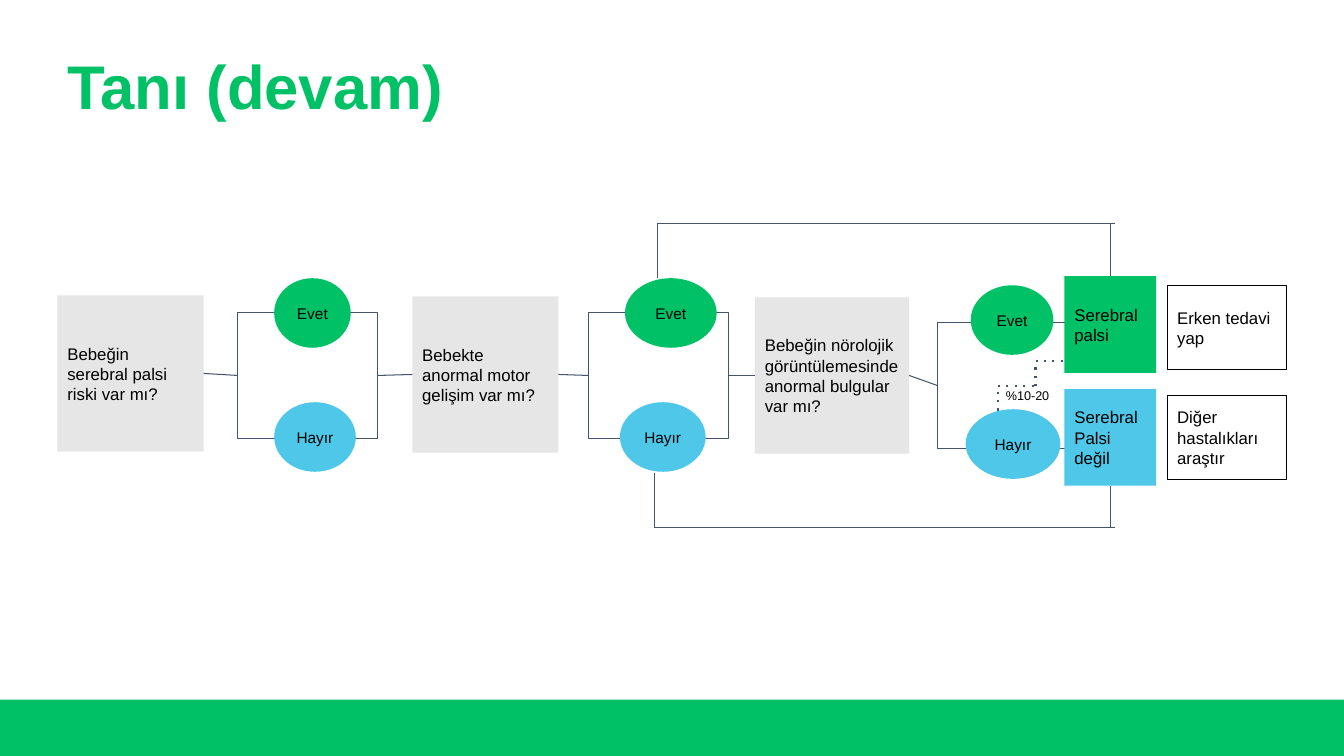
"""Build the slide with the decision flow for diagnosing cerebral palsy."""
from dataclasses import dataclass
from itertools import pairwise

from lxml.etree import SubElement
from pptx import Presentation
from pptx.dml.color import RGBColor as RGB
from pptx.enum.shapes import MSO_CONNECTOR as CONN, MSO_SHAPE as SHAPE
from pptx.enum.text import MSO_ANCHOR as ANCHOR, PP_ALIGN as ALIGN
from pptx.oxml.ns import qn
from pptx.util import Inches, Pt

WIDTH, HEIGHT = Inches(13.333), Inches(7.5)
COL, ROW = WIDTH / 80, HEIGHT / 45
TOP, LEFT, BOTTOM, RIGHT = range(4)


@dataclass(frozen=True)
class Theme:
    font: str = "Arial"
    green: str = "00C165"
    blue: str = "4FC7E8"
    grey: str = "E7E6E6"
    line: str = "44546A"
    white: str = "FFFFFF"
    black: str = "000000"
    title: int = 44
    body: int = 12
    answer: int = 11
    note: int = 9
    thin: float = 0.75
    dotted: float = 1.5


THEME = Theme()


def grid(x, y, w, h):
    return round(x * COL), round(y * ROW), round(w * COL), round(h * ROW)


def write(sp, text, size, align=ALIGN.LEFT, color=THEME.black, bold=False):
    tf = sp.text_frame
    tf.text = text
    tf.word_wrap = True
    tf.vertical_anchor = ANCHOR.MIDDLE
    tf.margin_left = tf.margin_right = Inches(0.1)
    tf.margin_top = tf.margin_bottom = Inches(0.1)
    p = tf.paragraphs[0]
    p.alignment = align
    r = p.runs[0]
    r.font.name, r.font.size, r.font.bold = THEME.font, Pt(size), bold
    r.font.color.rgb = RGB.from_string(color)


def add_title(s, text, box):
    sp = s.shapes.title
    sp.left, sp.top, sp.width, sp.height = grid(*box)
    write(sp, text, THEME.title, color=THEME.green, bold=True)
    sp.text_frame.margin_top = sp.text_frame.margin_bottom = Inches(0.05)
    sp.text_frame.paragraphs[0].line_spacing = 0.9


def add_box(s, box, fill=None, line=None, text="", kind=SHAPE.RECTANGLE):
    sp = s.shapes.add_shape(kind, *grid(*box))
    sp.shadow.inherit = False
    if fill:
        sp.fill.solid()
        sp.fill.fore_color.rgb = RGB.from_string(fill)
    else:
        sp.fill.background()
    if line:
        sp.line.color.rgb = RGB.from_string(line)
        sp.line.width = Pt(THEME.thin)
    else:
        sp.line.fill.background()
    if text and kind == SHAPE.OVAL:
        write(sp, text, THEME.answer, ALIGN.CENTER)
    elif text:
        write(sp, text, THEME.body)
    return sp


def add_line(s, start=(0, 0), end=(0, 0), dotted=False):
    cx = s.shapes.add_connector(CONN.STRAIGHT, *grid(*start, *end))
    cx.line.color.rgb = RGB.from_string(THEME.line)
    cx.line.width = Pt(THEME.dotted if dotted else THEME.thin)
    props = cx._element.spPr
    if dotted:
        SubElement(props.find(qn("a:ln")), qn("a:prstDash"), val="dot")
    SubElement(props, qn("a:effectLst"))
    return cx


def add_path(s, points):
    for start, end in pairwise(points):
        add_line(s, start, end, dotted=True)


def add_detour(s, x, edge, rail, result, side):
    """Lead from an answer along an outer rail to a side of a result."""
    add_line(s, (x, edge), (x, rail))
    add_line(s, (x, rail), (66.4, rail))
    add_line(s, (66.09, rail)).end_connect(result, side)


def add_answers(s, yes_x, yes_w, no_x, no_w, y):
    add_box(s, (yes_x, y, yes_w, 4.14), THEME.green, text="Evet", kind=SHAPE.OVAL)
    add_box(s, (no_x, y + 7.38, no_w, 4.14), THEME.blue, text="Hayır", kind=SHAPE.OVAL)


def main():
    prs = Presentation()
    prs.slide_width, prs.slide_height = WIDTH, HEIGHT
    s = prs.slides.add_slide(prs.slide_layouts[5])
    add_box(s, (0, 41.64, 80, 3.36), THEME.green)
    add_title(s, "Tanı (devam)", (3.42, 3, 32.82, 4.68))

    frames = [add_box(s, (x, y, 8.34, 7.5), line=THEME.line)
              for x, y in ((14.16, 18.6), (35.04, 18.6), (55.8, 19.2))]
    add_box(s, (63.48, 17.7, 1.98, 9.24), THEME.white)
    add_path(s, [(59.4, 25.44), (59.4, 23), (61.64, 23), (61.64, 21.5), (63.5, 21.5)])

    questions = [add_box(s, (x, y, w, 9.3), THEME.grey, text=text) for x, y, w, text in (
        (3.42, 17.58, 8.7, "Bebeğin serebral palsi riski var mı?"),
        (24.54, 17.64, 8.7, "Bebekte anormal motor gelişim var mı?"),
        (44.94, 17.7, 9.18, "Bebeğin nörolojik görüntülemesinde anormal bulgular var mı?"))]
    chain = [sp for pair in zip(questions, frames) for sp in pair]
    for source, target in pairwise(chain):
        cx = add_line(s)
        cx.begin_connect(source, RIGHT)
        cx.end_connect(target, LEFT)

    for answers in ((16.32, 4.56, 16.32, 4.86, 16.56),
                    (37.2, 5.46, 36.9, 5.1, 16.56),
                    (57.78, 4.92, 57.48, 5.64, 16.98)):
        add_answers(s, *answers)

    palsy, other = [add_box(s, (63.36, y, 5.46, 5.76), fill, text=text) for y, fill, text in (
        (16.44, THEME.green, "Serebral palsi"),
        (23.16, THEME.blue, "Serebral Palsi değil"))]
    add_detour(s, 39.15, 16.56, 13.3, palsy, TOP)
    add_detour(s, 38.94, 28.14, 31.4, other, BOTTOM)
    for y, text in ((16.98, "Erken tedavi yap"), (23.52, "Diğer hastalıkları araştır")):
        add_box(s, (69.48, y, 7.08, 5.04), THEME.white, THEME.black, text)

    note = s.shapes.add_textbox(*grid(59.28, 22.86, 5.46, 1.38))
    write(note, "%10-20", THEME.note)
    prs.save("out.pptx")


if __name__ == "__main__":
    main()
